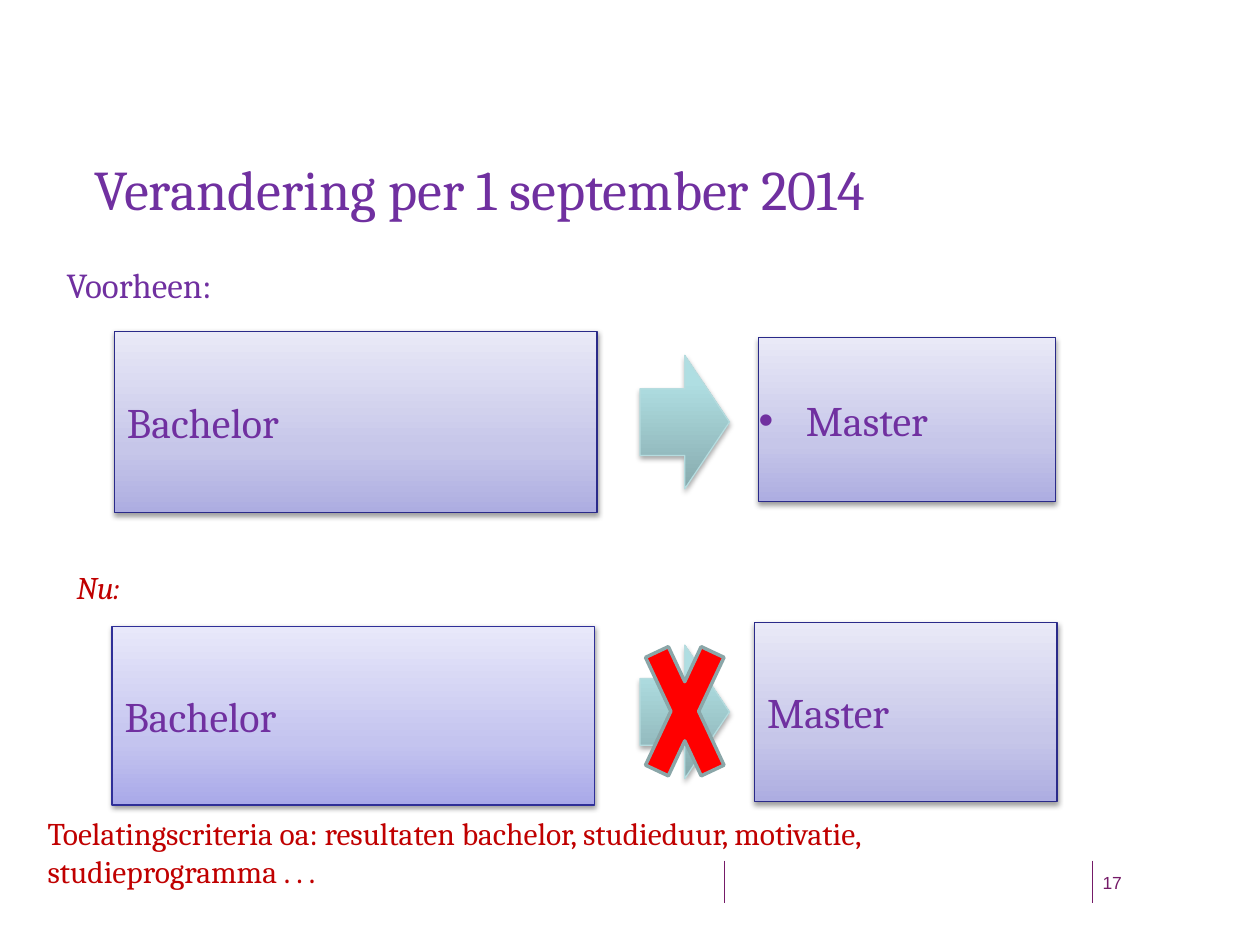
from lxml.etree import SubElement as Sub
from pptx import Presentation
from pptx.dml.color import RGBColor
from pptx.enum.shapes import MSO_CONNECTOR as Conn, MSO_SHAPE as Kind
from pptx.enum.text import MSO_ANCHOR as Anchor, MSO_AUTO_SIZE as Auto, PP_ALIGN as Align
from pptx.oxml.ns import qn
from pptx.util import Inches, Pt

PURPLE, RED, PLUM = "7030A0", "C00000", "751B68"
LILAC = [(0, "ADADE1"), (35, "C6C6E9"), (100, "E9E9F7")]
VIOLET = [(0, "A9A9E9"), (35, "C4C4EF"), (100, "E8E8FA")]
TEAL = [(0, "87ABAE"), (80, "AFDEE2"), (100, "AFE0E4")]


def color(code):
    return RGBColor.from_string(code)


def place(shape, box):
    shape.left, shape.top, shape.width, shape.height = map(Inches, box)


def write(shape, text, size, code, face="Cambria", slant=False, flush=False):
    frame = shape.text_frame
    frame.text = text
    frame.word_wrap = True
    if flush:
        frame.margin_left = frame.margin_right = 0
        frame.margin_top = frame.margin_bottom = 0
    para = frame.paragraphs[0]
    para.alignment = Align.LEFT
    font = para.runs[0].font
    font.size, font.name, font.italic = Pt(size), face, slant
    font.color.rgb = color(code)
    return frame


def label(slide, box, text, size, code, **style):
    shape = slide.shapes.add_textbox(*map(Inches, box))
    return write(shape, text, size, code, **style)


def outline(shape, code, width):
    shape.line.color.rgb = color(code)
    shape.line.width = Pt(width)


def shade(shape, stops, edge, alpha, dist):
    shape.fill.gradient()
    shape.fill.gradient_angle = 90
    props = shape._element.spPr
    ramp = props.find(qn("a:gradFill")).find(qn("a:gsLst"))
    for stop in list(ramp):
        ramp.remove(stop)
    for pos, code in stops:
        stop = Sub(ramp, qn("a:gs"), pos=str(pos * 1000))
        Sub(stop, qn("a:srgbClr"), val=code)
    outline(shape, edge, 0.75)
    shape.shadow.inherit = False
    glow = Sub(props.find(qn("a:effectLst")), qn("a:outerShdw"), blurRad=str(Pt(3.1)),
               dist=str(Pt(dist)), dir="5400000", rotWithShape="0")
    tone = Sub(glow, qn("a:srgbClr"), val="000000")
    Sub(tone, qn("a:alpha"), val=str(alpha * 1000))


def block(shape, text, stops=LILAC, edge="2A2A89", flush=False):
    shade(shape, stops, edge, 38, 1.6)
    frame = write(shape, text, 24, PURPLE, flush=flush)
    frame.vertical_anchor = Anchor.MIDDLE


def arrow(slide, box):
    shape = slide.shapes.add_shape(Kind.RIGHT_ARROW, *map(Inches, box))
    shade(shape, TEAL, "B6DCDF", 35, 1.8)


def head(slide, box):
    title = slide.shapes.title
    place(title, box)
    frame = write(title, "Verandering per 1 september 2014", 32, PURPLE, flush=True)
    frame.vertical_anchor = Anchor.TOP
    frame.auto_size = Auto.NONE


def before(slide, left, top):
    frame = label(slide, (left, top, 1.42, 0.44), "Voorheen:", 20, PURPLE)
    frame.word_wrap = False
    box = left + 0.48, top + 0.59, 3.83, 1.44
    block(slide.shapes.add_shape(Kind.RECTANGLE, *map(Inches, box)), "Bachelor")
    body = slide.placeholders[1]
    place(body, (left + 5.59, top + 0.64, 2.36, 1.3))
    props = body.text_frame.paragraphs[0]._p.get_or_add_pPr()
    props.set("marL", "0")
    props.set("indent", "0")
    Sub(props, qn("a:buNone"))
    block(body, "Master", flush=True)
    body.text_frame.paragraphs[0].space_before = Pt(0)
    body.text_frame.auto_size = Auto.NONE
    arrow(slide, (left + 4.65, top + 0.78, 0.71, 1.06))


def after(slide, left, top):
    label(slide, (left, top, 8.35, 0.4), "Nu:", 18, RED, slant=True)
    box = left + 0.38, top + 0.51, 3.83, 1.42
    block(slide.shapes.add_shape(Kind.RECTANGLE, *map(Inches, box)), "Bachelor", VIOLET, "2F2F98")
    box = left + 5.48, top + 0.48, 2.4, 1.42
    block(slide.shapes.add_shape(Kind.RECTANGLE, *map(Inches, box)), "Master")
    arrow(slide, (left + 4.57, top + 0.66, 0.71, 1.06))
    box = left + 4.5, top + 0.28, 0.85, 1.81
    cross = slide.shapes.add_shape(Kind.MATH_MULTIPLY, *map(Inches, box))
    cross.fill.solid()
    cross.fill.fore_color.rgb = color("FF0000")
    outline(cross, "8AA6A8", 2)
    cross.shadow.inherit = False
    text = "Toelatingscriteria oa: resultaten bachelor, studieduur, motivatie, studieprogramma . . ."
    label(slide, (left - 0.23, top + 1.95, 8.5, 0.71), text, 18, RED)


def foot(slide, top):
    for left in (5.75, 8.67):
        ends = left, top, left, top + 0.34
        line = slide.shapes.add_connector(Conn.STRAIGHT, *map(Inches, ends))
        outline(line, PLUM, 0.75)
        Sub(line._element.spPr, qn("a:effectLst"))
    label(slide, (8.75, top + 0.09, 0.58, 0.43), "17", 10, PLUM, face="Arial", flush=True)


def main():
    deck = Presentation()
    deck.slide_width, deck.slide_height = Inches(10), Inches(7.5)
    slide = deck.slides.add_slide(deck.slide_layouts[1])
    head(slide, (0.75, 1.23, 8.08, 0.79))
    before(slide, 0.43, 2.04)
    after(slide, 0.51, 4.46)
    foot(slide, 6.83)
    deck.save("out.pptx")


if __name__ == "__main__":
    main()
